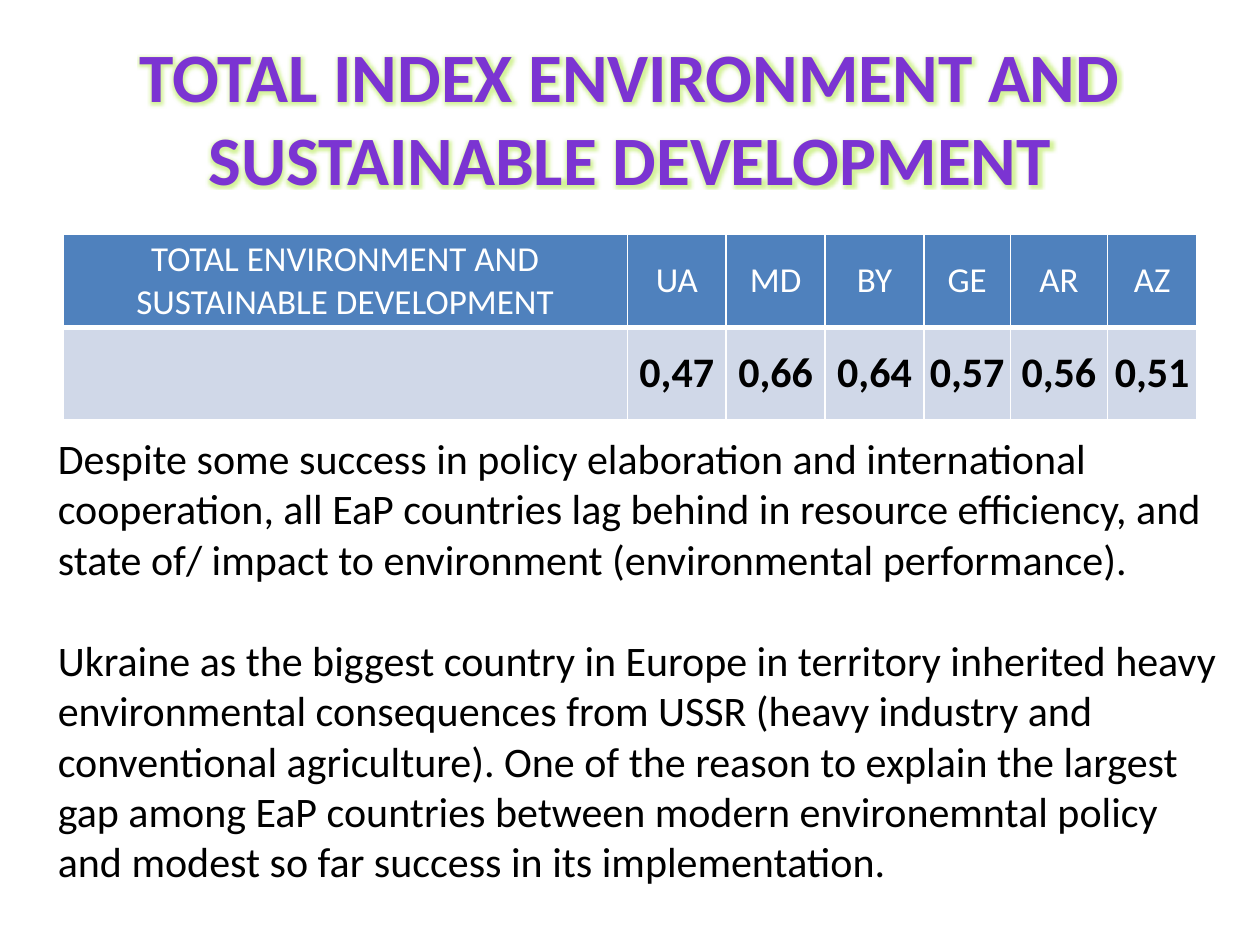
from lxml import etree
from pptx import Presentation
from pptx.dml.color import RGBColor
from pptx.enum import text
from pptx.oxml import ns
from pptx.util import Pt

FONT = "Calibri"
WHITE = RGBColor(0xFF, 0xFF, 0xFF)
BLACK = RGBColor(0, 0, 0)
HEADER_BLUE = RGBColor(0x4F, 0x81, 0xBD)
ROW_BLUE = RGBColor(0xD0, 0xD8, 0xE8)
TITLE_OUTLINE = RGBColor(0x5E, 0x45, 0x7C)
TITLE_GLOW = RGBColor(0xD4, 0xF2, 0x9A)
DARK_PURPLE = RGBColor(0x3D, 0x1B, 0x67)
TITLE_STOPS = [(0, DARK_PURPLE), (43, RGBColor(0x7B, 0x34, 0xD2)),
               (48, RGBColor(0x73, 0x30, 0xC4)), (100, DARK_PURPLE)]

TITLE = "TOTAL INDEX ENVIRONMENT AND SUSTAINABLE DEVELOPMENT"
TABLE_LABEL = "TOTAL ENVIRONMENT AND SUSTAINABLE DEVELOPMENT"
INDEX_VALUES = {"UA": "0,47", "MD": "0,66", "BY": "0,64",
                "GE": "0,57", "AR": "0,56", "AZ": "0,51"}
COLUMN_WIDTHS = [322.5, 56.5, 56.5, 56.5, 49.5, 55.3, 51.2]
COMMENTS = [
    "Despite some success in policy elaboration and international "
    "cooperation, all EaP countries lag behind in resource efficiency, and "
    "state of/ impact to environment (environmental performance).",
    "Ukraine as the biggest country in Europe in territory inherited heavy "
    "environmental consequences from USSR (heavy industry and conventional "
    "agriculture). One of the reason to explain the largest gap among EaP "
    "countries between modern environemntal policy and modest so far success "
    "in its implementation.",
]


def add_element(parent, tag, **attributes):
    element = etree.SubElement(parent, ns.qn(tag))
    for name, value in attributes.items():
        element.set(name, str(value))
    return element


def add_color(parent, color):
    return add_element(parent, "a:srgbClr", val=color)


def add_run(paragraph, words, size, color=None, bold=False):
    run = paragraph.add_run()
    run.text = words
    run.font.name = FONT
    run.font.size = Pt(size)
    run.font.bold = bold
    if color is not None:
        run.font.color.rgb = color
    return run


def style_title_run(run):
    """Outline, gradient fill and glow, in the order the schema asks for."""
    properties = run.font._element
    line = add_element(properties, "a:ln", w=Pt(0.71))
    add_color(add_element(line, "a:solidFill"), TITLE_OUTLINE)
    gradient = add_element(properties, "a:gradFill")
    stops = add_element(gradient, "a:gsLst")
    for percent, color in TITLE_STOPS:
        add_color(add_element(stops, "a:gs", pos=percent * 1000), color)
    add_element(gradient, "a:lin", ang=90 * 60000, scaled=0)
    effects = add_element(properties, "a:effectLst")
    glow = add_element(effects, "a:glow", rad=Pt(4))
    add_color(glow, TITLE_GLOW)
    for position, element in enumerate((line, gradient, effects)):
        properties.insert(position, element)


def place_title(slide, left, top, width, height):
    title = slide.shapes.title
    title.left, title.top = Pt(left), Pt(top)
    title.width, title.height = Pt(width), Pt(height)
    frame = title.text_frame
    frame.word_wrap = True
    frame.auto_size = text.MSO_AUTO_SIZE.NONE
    frame.vertical_anchor = text.MSO_ANCHOR.MIDDLE
    paragraph = frame.paragraphs[0]
    paragraph.alignment = text.PP_ALIGN.CENTER
    style_title_run(add_run(paragraph, TITLE, 39.6, bold=True))


def set_borders(cell, **widths):
    properties = cell._tc.get_or_add_tcPr()
    for position, side in enumerate("LRTB"):
        line = add_element(properties, "a:ln" + side, w=Pt(widths.get(side, 1)))
        add_color(add_element(line, "a:solidFill"), WHITE)
        properties.insert(position, line)


def fill_cell(cell, words, header, inset):
    cell.fill.solid()
    cell.fill.fore_color.rgb = HEADER_BLUE if header else ROW_BLUE
    cell.vertical_anchor = text.MSO_ANCHOR.MIDDLE
    cell.margin_left = cell.margin_right = Pt(inset)
    cell.margin_top = cell.margin_bottom = Pt(0)
    paragraph = cell.text_frame.paragraphs[0]
    paragraph.alignment = text.PP_ALIGN.CENTER
    if words:
        add_run(paragraph, words, 20 if header else 24,
                WHITE if header else BLACK, bold=not header)
    if header:
        set_borders(cell, B=3)
    else:
        set_borders(cell, T=3)


def place_table(slide, left, top, width, height):
    rows = [[TABLE_LABEL, *INDEX_VALUES], ["", *INDEX_VALUES.values()]]
    table = slide.shapes.add_table(len(rows), len(COLUMN_WIDTHS), Pt(left),
                                   Pt(top), Pt(width), Pt(height)).table
    for column, column_width in zip(table.columns, COLUMN_WIDTHS):
        column.width = Pt(column_width)
    for row_index, row in enumerate(rows):
        header = row_index == 0
        for column_index, words in enumerate(row):
            inset = 5 if header and column_index else 0
            fill_cell(table.cell(row_index, column_index), words, header, inset)


def place_comments(slide, left, top, width, height):
    box = slide.shapes.add_textbox(Pt(left), Pt(top), Pt(width), Pt(height))
    frame = box.text_frame
    frame.word_wrap = True
    frame.auto_size = text.MSO_AUTO_SIZE.SHAPE_TO_FIT_TEXT
    for index, words in enumerate(COMMENTS):
        paragraph = frame.add_paragraph() if index else frame.paragraphs[0]
        paragraph.space_before = Pt(29 if index else 0)
        add_run(paragraph, words, 24, BLACK)


def main():
    presentation = Presentation()
    presentation.slide_width, presentation.slide_height = Pt(720), Pt(540)
    slide = presentation.slides.add_slide(presentation.slide_layouts[5])
    # Heading
    place_title(slide, 36, 21.6, 648, 90)
    # Index by country
    place_table(slide, 36, 134, 648, 106)
    # Comments below the table
    place_comments(slide, 26, 243.5, 681, 269)
    presentation.save("out.pptx")


if __name__ == "__main__":
    main()
